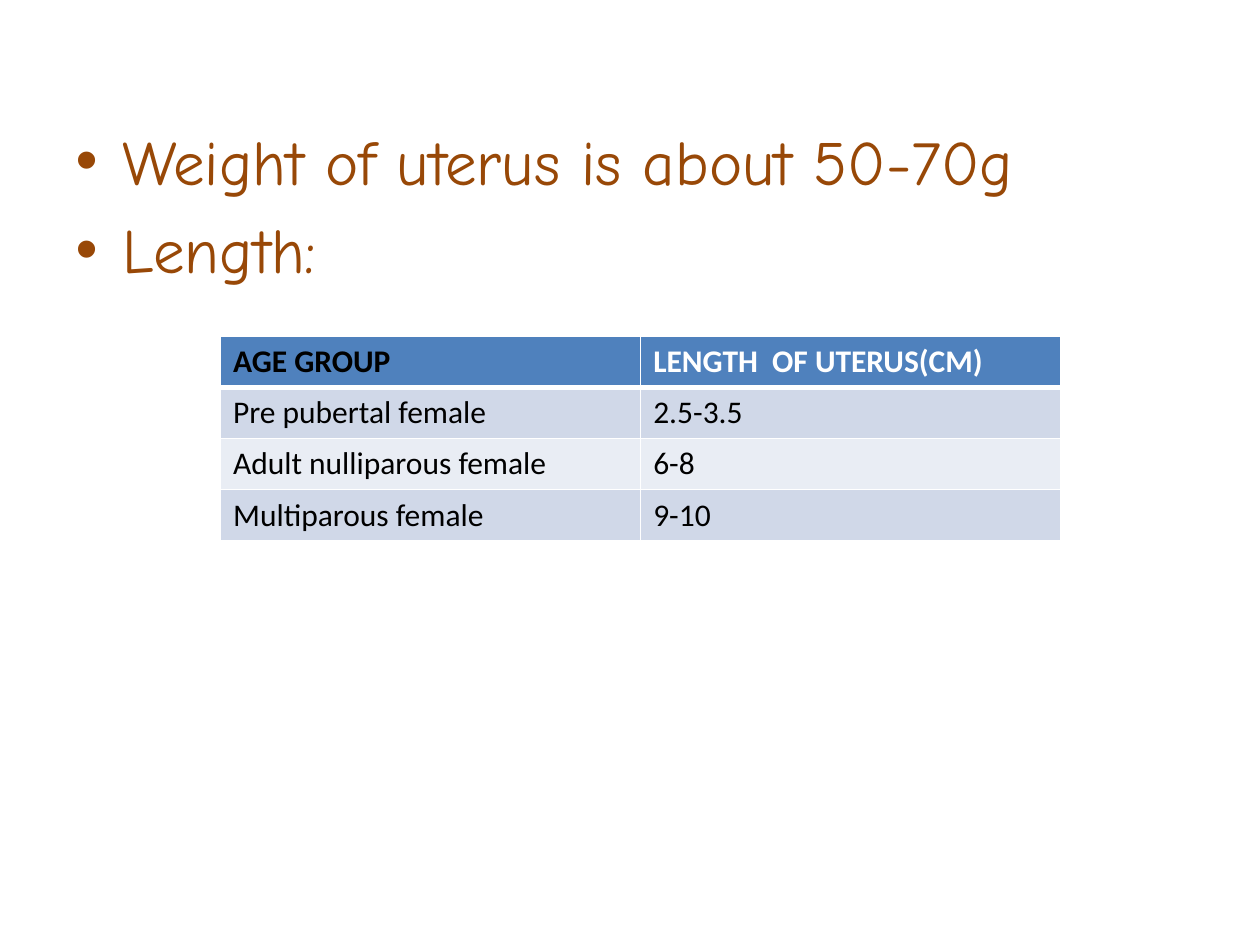
from lxml.etree import SubElement
from pptx import Presentation
from pptx.dml.color import RGBColor
from pptx.enum.text import MSO_AUTO_SIZE as AutoSize
from pptx.oxml.ns import qn
from pptx.util import Inches, Pt

BULLETS = ["Weight of uterus is about 50-70g", "Length:"]
ROWS = [
    ("AGE GROUP", "LENGTH  OF UTERUS(CM)"),
    ("Pre pubertal female", "2.5-3.5"),
    ("Adult nulliparous female", "6-8"),
    ("Multiparous female", "9-10"),
]
HEADER_FILL = "4F81BD"
BAND_FILLS = ["E9EDF4", "D0D8E8"]
BROWN, BLACK, WHITE = "984807", "000000", "FFFFFF"


def rgb(value):
    """Turn a hex string into a colour."""
    return RGBColor.from_string(value)


def add_text(p, text, font="Calibri", size=18, color=BLACK, bold=False):
    """Add a formatted run to a paragraph."""
    r = p.add_run()
    r.text = text
    r.font.name = font
    r.font.size = Pt(size)
    r.font.bold = bold
    r.font.color.rgb = rgb(color)


def set_borders(cell, **widths):
    """Draw white cell borders, with widths in points by side."""
    pr = cell._tc.get_or_add_tcPr()
    for i, side in enumerate("LRTB"):
        ln = SubElement(pr, qn(f"a:ln{side}"), w=str(Pt(widths.get(side, 1))))
        fill = SubElement(ln, qn("a:solidFill"))
        SubElement(fill, qn("a:srgbClr"), val=WHITE)
        pr.insert(i, ln)


def add_bullets(s, items):
    """Fill the body placeholder with bulleted lines."""
    sp = s.placeholders[1]
    sp.left, sp.top = Inches(0.5), Inches(0.92)
    sp.width, sp.height = Inches(9), Inches(5.78)
    tf = sp.text_frame
    tf.auto_size = AutoSize.NONE
    for i, item in enumerate(items):
        p = tf.add_paragraph() if i else tf.paragraphs[0]
        add_text(p, item, font="Comic Neue", size=36, color=BROWN)


def add_length_table(s, rows):
    """Add the banded table of lengths by age group."""
    table = s.shapes.add_table(len(rows), len(rows[0]), Inches(1.75), Inches(2.67),
                               Inches(6.67), Inches(1.6)).table
    for i, row in enumerate(rows):
        header = i == 0
        for j, text in enumerate(row):
            cell = table.cell(i, j)
            cell.fill.solid()
            cell.fill.fore_color.rgb = rgb(HEADER_FILL if header else BAND_FILLS[i % 2])
            set_borders(cell, T=3 if i == 1 else 1, B=3 if header else 1)
            add_text(cell.text_frame.paragraphs[0], text, bold=header,
                     color=WHITE if header and j else BLACK)


def main():
    """Build the slide and save it."""
    prs = Presentation()
    prs.slide_width, prs.slide_height = Inches(10), Inches(7.5)
    s = prs.slides.add_slide(prs.slide_layouts[1])
    title = s.shapes.title.element
    title.getparent().remove(title)
    add_bullets(s, BULLETS)
    add_length_table(s, ROWS)
    prs.save("out.pptx")


if __name__ == "__main__":
    main()
